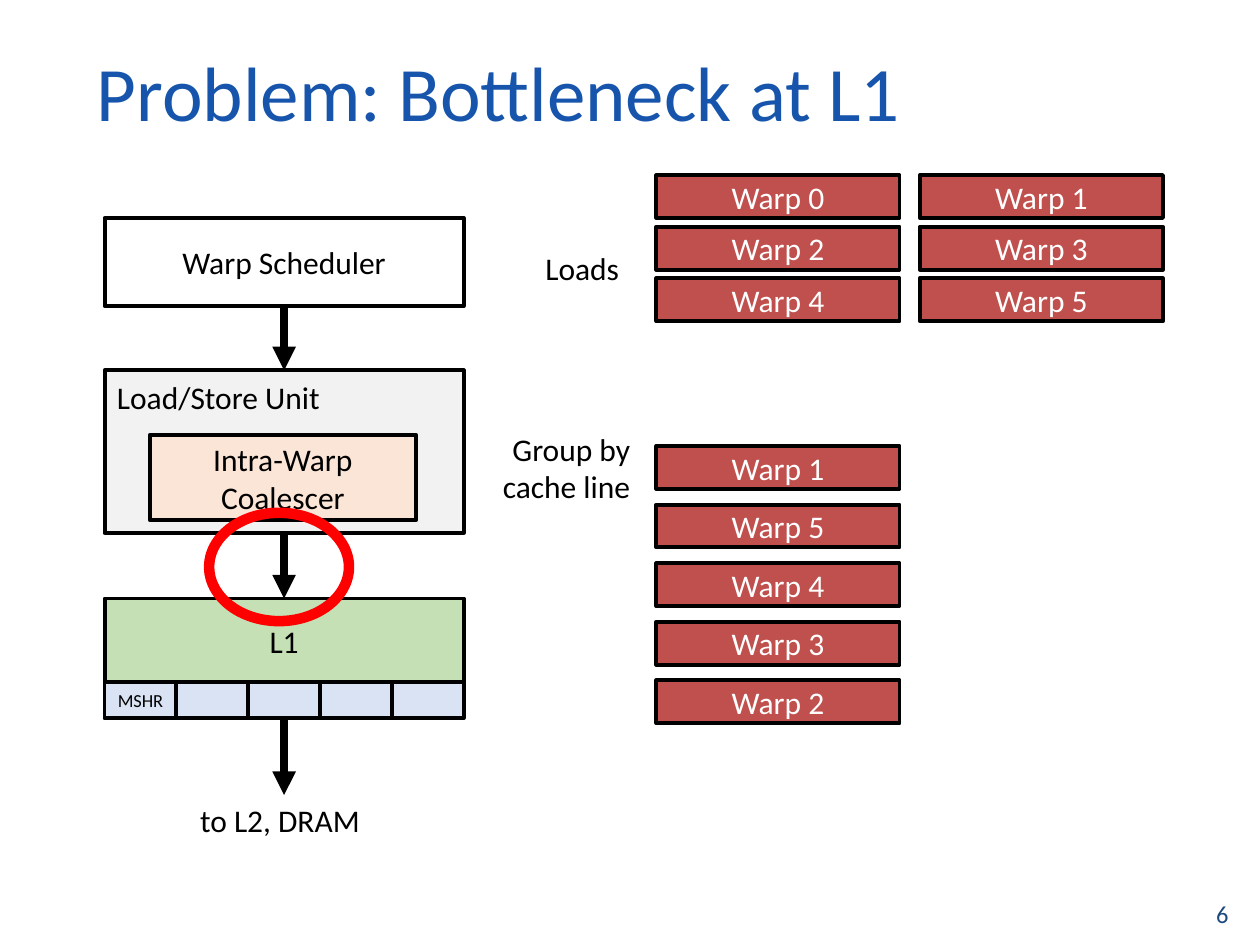
from lxml import etree
from pptx import Presentation
from pptx.dml.color import RGBColor
from pptx.enum import shapes, text
from pptx.oxml.ns import qn
from pptx.util import Inches, Pt

COLORS = {
    "black": "000000", "white": "FFFFFF", "title": "1755AD", "page": "1F497D",
    "unit": "F2F2F2", "coalescer": "FBE5D6", "cache": "C5E0B4",
    "mshr": "DAE3F3", "warp": "C0504D", "highlight": "FF0000",
}
FONT = "Calibri"

TITLE = "Problem: Bottleneck at L1"
PAGE = "6"
LOADS = [["Warp 0", "Warp 1"], ["Warp 2", "Warp 3"], ["Warp 4", "Warp 5"]]
GROUPED = ["Warp 1", "Warp 5", "Warp 4", "Warp 3", "Warp 2"]
MSHRS = ["MSHR", "", "", "", ""]

STACK_LEFT, STACK_WIDTH = 0.83, 2.85
STACK_MID = STACK_LEFT + STACK_WIDTH / 2
MSHR_TOP, MSHR_HEIGHT = 5.41, 0.29
WARP_LEFT, WARP_WIDTH, WARP_HEIGHT = 5.21, 1.93, 0.34
LOADS_TOP, LOADS_COLUMN, LOADS_ROW = 1.39, 2.09, 0.41
GROUPED_TOP, GROUPED_BOTTOM = 3.54, 5.4
GROUPED_ROW = (GROUPED_BOTTOM - GROUPED_TOP) / (len(GROUPED) - 1)

ALIGN = {"left": text.PP_ALIGN.LEFT, "center": text.PP_ALIGN.CENTER, "right": text.PP_ALIGN.RIGHT}

deck = Presentation()
deck.slide_width, deck.slide_height = Inches(10), Inches(7.5)
slide = deck.slides.add_slide(deck.slide_layouts[6])


def rgb(name):
    return RGBColor.from_string(COLORS[name])


def write(holder, words, size=18, color="black", align="center", middle=True):
    frame = holder.text_frame
    frame.word_wrap = True
    frame.vertical_anchor = text.MSO_ANCHOR.MIDDLE if middle else text.MSO_ANCHOR.TOP
    paragraph = frame.paragraphs[0]
    paragraph.alignment = ALIGN[align]
    run = paragraph.add_run()
    run.text = words
    run.font.name = FONT
    run.font.size = Pt(size)
    run.font.color.rgb = rgb(color)


def label(words, left, top, width, height, **style):
    box = slide.shapes.add_textbox(*map(Inches, (left, top, width, height)))
    write(box, words, **style)


def block(left, top, width, height, fill=None, words="", line="black", weight=2.25,
          kind=shapes.MSO_SHAPE.RECTANGLE, **style):
    part = slide.shapes.add_shape(kind, *map(Inches, (left, top, width, height)))
    part.shadow.inherit = False
    if fill:
        part.fill.solid()
        part.fill.fore_color.rgb = rgb(fill)
    else:
        part.fill.background()
    part.line.color.rgb = rgb(line)
    part.line.width = Pt(weight)
    if words:
        write(part, words, **style)
    return part


def arrow(source, target=None, end_y=0):
    flow = slide.shapes.add_connector(
        shapes.MSO_CONNECTOR.STRAIGHT, Inches(STACK_MID), source.top + source.height,
        Inches(STACK_MID), Inches(end_y))
    flow.begin_connect(source, 2)
    if target is not None:
        flow.end_connect(target, 0)
    flow.line.color.rgb = rgb("black")
    flow.line.width = Pt(4.5)
    etree.SubElement(flow.line._get_or_add_ln(), qn("a:tailEnd"), type="triangle")
    etree.SubElement(flow._element.spPr, qn("a:effectLst"))


label(TITLE, 0.67, 0.26, 9, 0.92, size=44, color="title", align="left")
label(PAGE, 7.52, 7.05, 2.33, 0.4, size=14, color="page", align="right")

scheduler = block(STACK_LEFT, 1.73, STACK_WIDTH, 0.7, "white", "Warp Scheduler")
load_store = block(STACK_LEFT, 2.94, STACK_WIDTH, 1.29, "unit")
block(1.19, 3.45, 2.11, 0.68, "coalescer", "Intra-Warp Coalescer")
label("Load/Store Unit", STACK_LEFT, 2.95, 2.9, 0.4, align="left", middle=False)
cache = block(STACK_LEFT, 4.75, STACK_WIDTH, 0.68, "cache", "L1")

arrow(scheduler, load_store)
arrow(load_store, cache)
arrow(cache, end_y=6.31)
label("to L2, DRAM", 1.49, 6.31, 1.66, 0.4, align="left", middle=False)

mshr_width = STACK_WIDTH / len(MSHRS)
for column, words in enumerate(MSHRS):
    block(STACK_LEFT + column * mshr_width, MSHR_TOP, mshr_width, MSHR_HEIGHT,
          "mshr", words, size=10.5)

label("Loads", 4.23, 1.93, 0.87, 0.4, align="left", middle=False)
label("Group by cache line", 3.79, 3.36, 1.31, 0.71, align="right", middle=False)

warps = [(words, WARP_LEFT + column * LOADS_COLUMN, LOADS_TOP + row * LOADS_ROW)
         for row, pair in enumerate(LOADS) for column, words in enumerate(pair)]
warps += [(words, WARP_LEFT, GROUPED_TOP + row * GROUPED_ROW)
          for row, words in enumerate(GROUPED)]
for words, left, top in warps:
    block(left, top, WARP_WIDTH, WARP_HEIGHT, "warp", words, color="white")

block(1.66, 4.07, 1.11, 0.86, line="highlight", weight=6, kind=shapes.MSO_SHAPE.OVAL)

deck.save("out.pptx")
